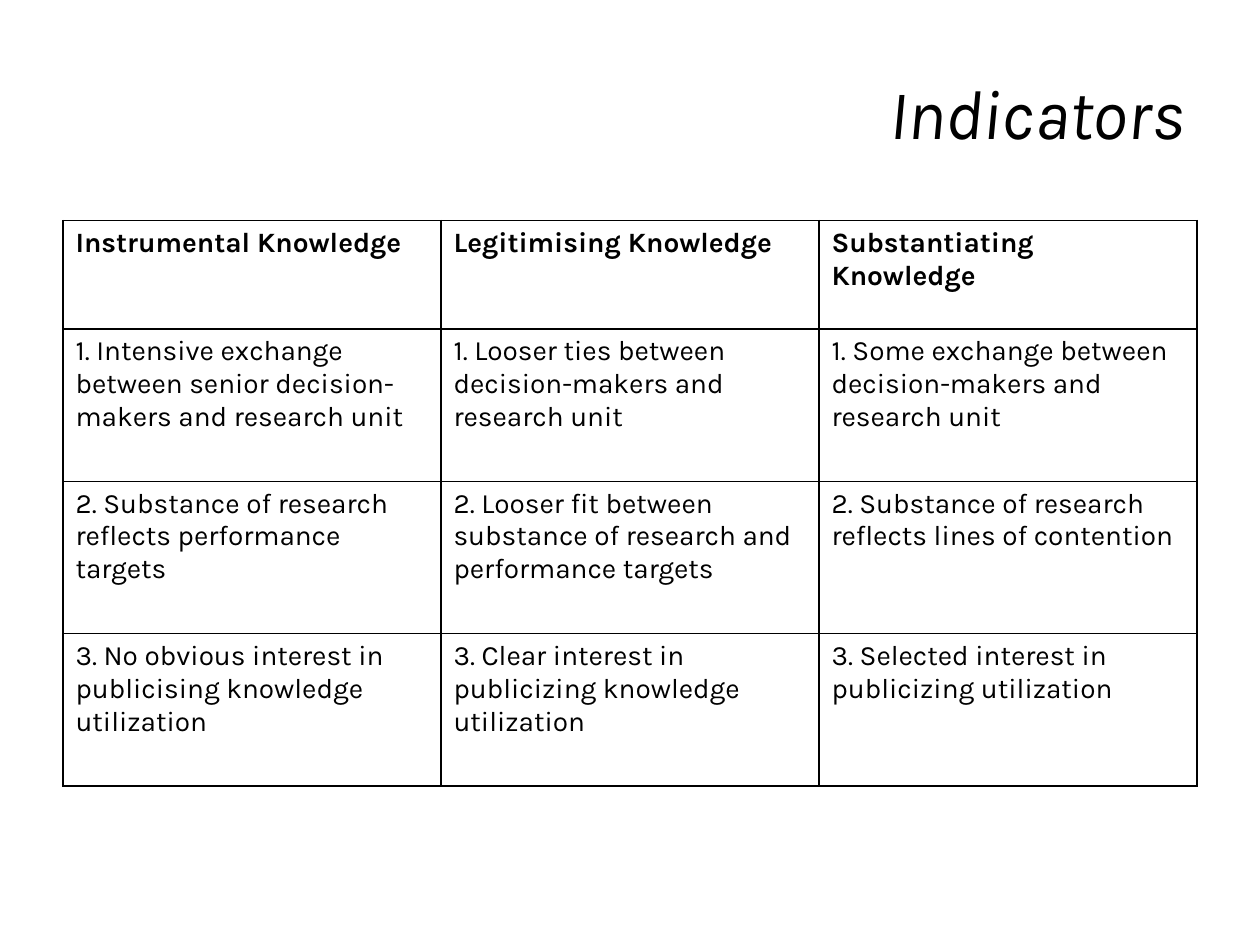
from dataclasses import dataclass

from lxml import etree
from pptx import Presentation
from pptx.dml.color import RGBColor
from pptx.enum.text import MSO_ANCHOR, MSO_AUTO_SIZE, PP_ALIGN
from pptx.oxml.ns import qn
from pptx.util import Inches, Pt

RIGHT, LEFT = PP_ALIGN.RIGHT, PP_ALIGN.LEFT
MIDDLE, TOP = MSO_ANCHOR.MIDDLE, MSO_ANCHOR.TOP
NO_AUTOFIT = MSO_AUTO_SIZE.NONE
TITLE_ONLY = 5


@dataclass(frozen=True)
class Theme:
    font: str = "Karla"
    ink: str = "000000"
    title_size: int = 40
    table_size: int = 16
    border_width: int = 1


THEME = Theme()

INDICATORS = [
    ["Instrumental Knowledge", "Legitimising Knowledge", "Substantiating Knowledge"],
    ["1. Intensive exchange between senior decision-makers and research unit",
     "1. Looser ties between decision-makers and research unit",
     "1. Some exchange between decision-makers and research unit"],
    ["2. Substance of research reflects performance targets",
     "2. Looser fit between substance of research and performance targets",
     "2. Substance of research reflects lines of contention"],
    ["3. No obvious interest in publicising knowledge utilization",
     "3. Clear interest in publicizing knowledge utilization",
     "3. Selected interest in publicizing utilization"],
]
COLUMN_WIDTH, HEADER_HEIGHT, ROW_HEIGHT = 3, 0.86, 1.21


def add_run(paragraph, text, size, bold=False, italic=False):
    run = paragraph.add_run()
    run.text = text
    run.font.name = THEME.font
    run.font.size = Pt(size)
    run.font.bold = bold
    run.font.italic = italic
    run.font.color.rgb = RGBColor.from_string(THEME.ink)


def add_borders(cell):
    properties = cell._tc.get_or_add_tcPr()
    for side in ("lnL", "lnR", "lnT", "lnB"):
        line = etree.SubElement(properties, qn(f"a:{side}"), w=str(Pt(THEME.border_width)))
        fill = etree.SubElement(line, qn("a:solidFill"))
        etree.SubElement(fill, qn("a:srgbClr"), val=THEME.ink)


presentation = Presentation()
presentation.slide_width, presentation.slide_height = Inches(10), Inches(7.5)
slide = presentation.slides.add_slide(presentation.slide_layouts[TITLE_ONLY])

# Title
title = slide.shapes.title
title.left, title.top = Inches(0.5), Inches(0.3)
title.width, title.height = Inches(9), Inches(1.25)
title.text_frame.auto_size = NO_AUTOFIT
title.text_frame.vertical_anchor = MIDDLE
heading = title.text_frame.paragraphs[0]
heading.alignment = RIGHT
heading.line_spacing = 0.9
add_run(heading, "Indicators", THEME.title_size, italic=True)

# Table of indicators
row_count, column_count = len(INDICATORS), len(INDICATORS[0])
table = slide.shapes.add_table(
    row_count, column_count, Inches(0.5), Inches(1.75),
    Inches(COLUMN_WIDTH * column_count),
    Inches(HEADER_HEIGHT + ROW_HEIGHT * (row_count - 1)),
).table
table.horz_banding = False
for column in table.columns:
    column.width = Inches(COLUMN_WIDTH)

for row_index, texts in enumerate(INDICATORS):
    is_header = row_index == 0
    table.rows[row_index].height = Inches(HEADER_HEIGHT if is_header else ROW_HEIGHT)
    for column_index, text in enumerate(texts):
        cell = table.cell(row_index, column_index)
        add_borders(cell)
        cell.fill.background()
        cell.vertical_anchor = TOP
        paragraph = cell.text_frame.paragraphs[0]
        paragraph.alignment = LEFT
        add_run(paragraph, text, THEME.table_size, bold=is_header)

presentation.save("out.pptx")
